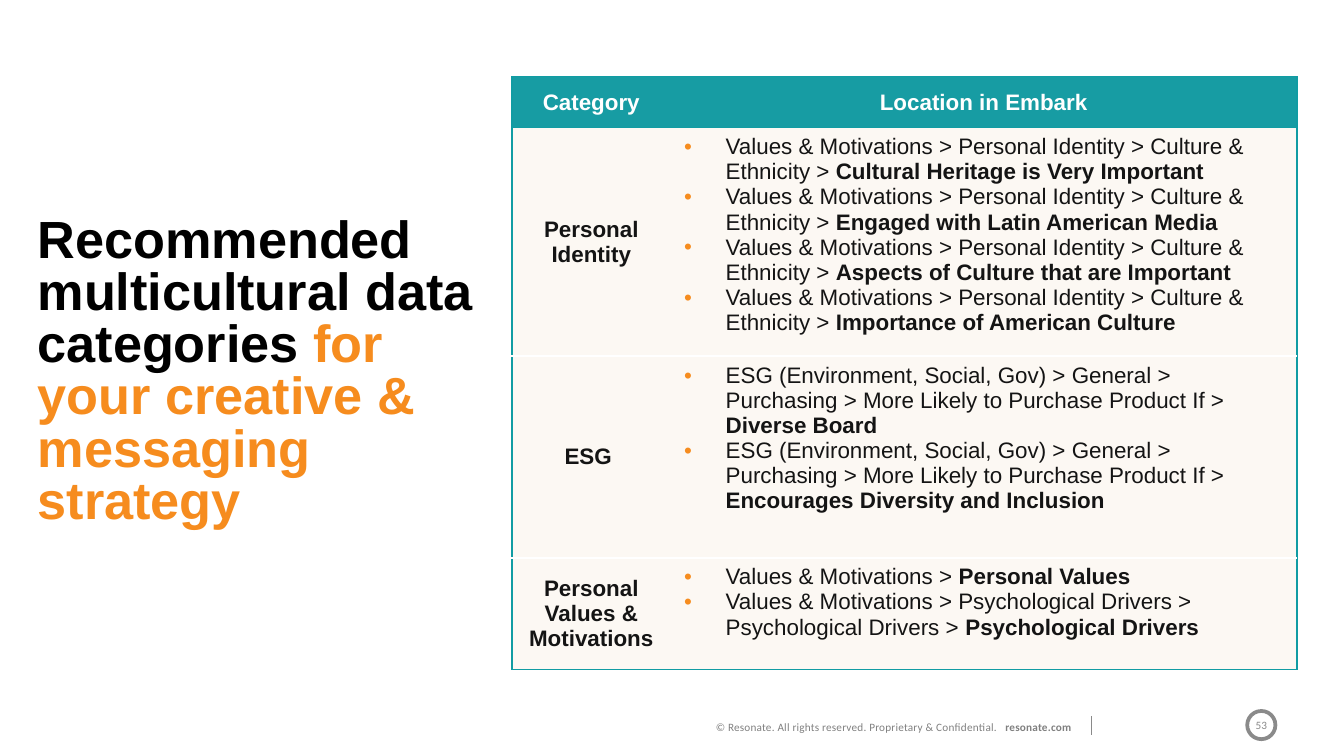
from lxml import etree
from pptx import Presentation
from pptx.dml.color import RGBColor
from pptx.enum.shapes import MSO_CONNECTOR, MSO_SHAPE
from pptx.enum.text import MSO_ANCHOR, MSO_AUTO_SIZE, PP_ALIGN
from pptx.oxml.ns import qn
from pptx.util import Inches, Pt

CENTER, LEFT, RIGHT = PP_ALIGN.CENTER, PP_ALIGN.LEFT, PP_ALIGN.RIGHT
MIDDLE, TOP = MSO_ANCHOR.MIDDLE, MSO_ANCHOR.TOP
FIXED = MSO_AUTO_SIZE.NONE
STRAIGHT = MSO_CONNECTOR.STRAIGHT
OVAL = MSO_SHAPE.OVAL

WHITE = RGBColor(0xFF, 0xFF, 0xFF)
BLACK = RGBColor(0, 0, 0)
INK = RGBColor(0x14, 0x14, 0x14)
ORANGE = RGBColor(0xF6, 0x8C, 0x1E)
TEAL = RGBColor(0x17, 0x9C, 0xA3)
BORDER_TEAL = RGBColor(0x11, 0x9C, 0xA3)
CREAM = RGBColor(0xFC, 0xF8, 0xF3)
GRAY = RGBColor(0x80, 0x80, 0x80)
RULE_GRAY = RGBColor(0x8A, 0x8A, 0x8A)

TITLE = [
    ("Recommended multicultural data categories ", BLACK),
    ("for your creative & messaging strategy", ORANGE),
]
HEADERS = ["Category", "Location in Embark"]
CULTURE = "Values & Motivations > Personal Identity > Culture & Ethnicity > "
PURCHASE = ("ESG (Environment, Social, Gov) > General > Purchasing > "
            "More Likely to Purchase Product If > ")
CATEGORIES = [
    ("Personal Identity", [
        (CULTURE, "Cultural Heritage is Very Important"),
        (CULTURE, "Engaged with Latin American Media"),
        (CULTURE, "Aspects of Culture that are Important"),
        (CULTURE, "Importance of American Culture"),
    ]),
    ("ESG ", [
        (PURCHASE, "Diverse Board"),
        (PURCHASE, "Encourages Diversity and Inclusion"),
    ]),
    ("Personal Values & Motivations", [
        ("Values & Motivations > ", "Personal Values"),
        ("Values & Motivations > Psychological Drivers > Psychological Drivers > ",
         "Psychological Drivers"),
    ]),
]
FOOTER = [
    ("© Resonate. All rights reserved. Proprietary & Confidential.   ", False),
    ("resonate.com ", True),
]
PAGE_NUMBER = "53"
COLUMN_WIDTHS = [1.18, 4.66]
ROW_HEIGHTS = [0.38, 1.7, 1.5, 0.83]


def style(paragraph, name, size, color, bold=None, align=LEFT):
    paragraph.alignment = align
    font = paragraph.font
    font.name, font.size, font.bold = name, Pt(size), bold
    font.color.rgb = color


def add_span(paragraph, text, bold):
    span = paragraph.add_run()
    span.text = text
    span.font.bold = bold
    return span


def add_bullet(paragraph):
    properties = paragraph._p.get_or_add_pPr()
    properties.set("marL", str(Inches(0.31)))
    properties.set("indent", str(-Inches(0.31)))
    color = etree.SubElement(properties, qn("a:buClr"))
    etree.SubElement(color, qn("a:srgbClr"), val=str(ORANGE))
    etree.SubElement(properties, qn("a:buFont"), typeface="Arial")
    etree.SubElement(properties, qn("a:buChar"), char="•")


def set_borders(cell, borders):
    properties = cell._tc.get_or_add_tcPr()
    for position, side in enumerate("LRTB"):
        color, width = borders.get(side, (None, 0))
        line = etree.Element(qn(f"a:ln{side}"), w=str(Pt(width)))
        if color is None:
            etree.SubElement(line, qn("a:noFill"))
        else:
            fill = etree.SubElement(line, qn("a:solidFill"))
            etree.SubElement(fill, qn("a:srgbClr"), val=str(color))
        properties.insert(position, line)


def add_title(page):
    title = page.shapes.title
    title.left, title.top = Inches(0.18), Inches(1.56)
    title.width, title.height = Inches(3.62), Inches(2.24)
    frame = title.text_frame
    frame.word_wrap, frame.auto_size, frame.vertical_anchor = True, FIXED, TOP
    paragraph = frame.paragraphs[0]
    style(paragraph, "Arial", 28, BLACK, True)
    paragraph.line_spacing = Pt(28)
    for text, color in TITLE:
        span = paragraph.add_run()
        span.text = text
        span.font.color.rgb = color


def fill_table(page):
    table = page.shapes.add_table(
        len(ROW_HEIGHTS), len(COLUMN_WIDTHS), Inches(3.81), Inches(0.57),
        Inches(sum(COLUMN_WIDTHS)), Inches(sum(ROW_HEIGHTS))).table
    for column, width in zip(table.columns, COLUMN_WIDTHS):
        column.width = Inches(width)
    for row, height in zip(table.rows, ROW_HEIGHTS):
        row.height = Inches(height)

    outer, inner = (BORDER_TEAL, 0.75), (WHITE, 1)
    last = len(ROW_HEIGHTS) - 1
    for index, row in enumerate(table.rows):
        for side, cell in zip("LR", row.cells):
            cell.fill.solid()
            cell.fill.fore_color.rgb = CREAM if index else TEAL
            set_borders(cell, {
                side: outer,
                "T": inner if index > 1 else outer,
                "B": inner if 0 < index < last else outer,
            })

    labels = [(0, column, text, WHITE) for column, text in enumerate(HEADERS)]
    labels += [(row, 0, name, INK) for row, (name, _) in enumerate(CATEGORIES, 1)]
    for row, column, text, color in labels:
        cell = table.cell(row, column)
        cell.text = text
        cell.vertical_anchor = MIDDLE
        style(cell.text_frame.paragraphs[0], "Arial", 12, color, True, CENTER)

    for row, (_, locations) in enumerate(CATEGORIES, 1):
        frame = table.cell(row, 1).text_frame
        for index, (trail, target) in enumerate(locations):
            paragraph = frame.add_paragraph() if index else frame.paragraphs[0]
            add_bullet(paragraph)
            style(paragraph, "Arial", 12, INK)
            add_span(paragraph, trail, False)
            add_span(paragraph, target, True)


def add_footer(page):
    box = page.shapes.add_textbox(Inches(-0.14), Inches(5.31), Inches(8.23), Inches(0.2))
    box.text_frame.word_wrap = True
    paragraph = box.text_frame.paragraphs[0]
    style(paragraph, "Calibri", 6, GRAY, align=RIGHT)
    for text, bold in FOOTER:
        span = add_span(paragraph, text, bold)
        span._r.get_or_add_rPr().set("spc", "10")

    divider = page.shapes.add_connector(
        STRAIGHT, Inches(8.12), Inches(5.33), Inches(8.12), Inches(5.47))
    divider.line.color.rgb, divider.line.width = RULE_GRAY, Pt(0.75)
    etree.SubElement(divider._element.spPr, qn("a:effectLst"))

    badge = page.shapes.add_shape(
        OVAL, Inches(9.28), Inches(5.29), Inches(0.21), Inches(0.21))
    badge.shadow.inherit = False
    badge.fill.background()
    badge.line.color.rgb, badge.line.width = RULE_GRAY, Pt(2)
    frame = badge.text_frame
    frame.word_wrap, frame.vertical_anchor = False, MIDDLE
    frame.text = PAGE_NUMBER
    style(frame.paragraphs[0], "Calibri", 6, RULE_GRAY, align=CENTER)


def main():
    deck = Presentation()
    deck.slide_width = Inches(10)
    deck.slide_height = deck.slide_width * 9 // 16
    page = deck.slides.add_slide(deck.slide_layouts[5])
    add_footer(page)
    add_title(page)
    fill_table(page)
    deck.save("out.pptx")


if __name__ == "__main__":
    main()
